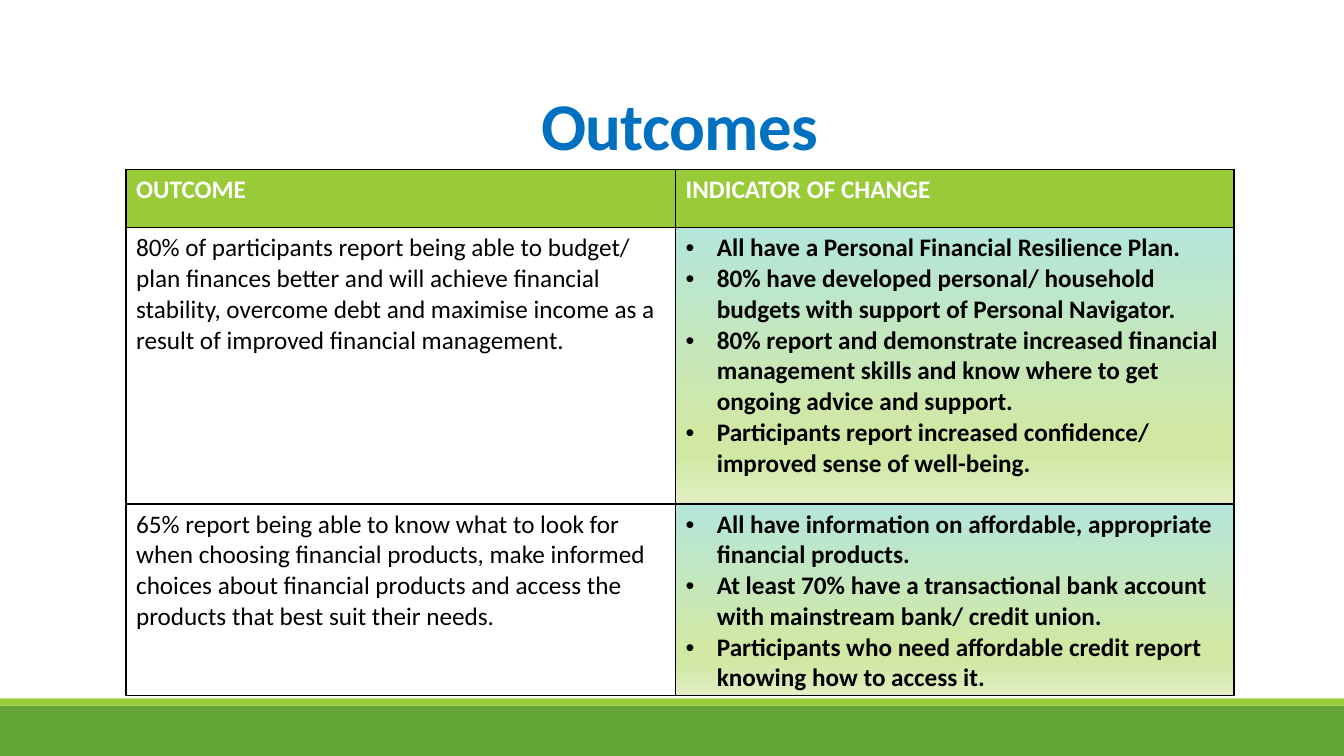
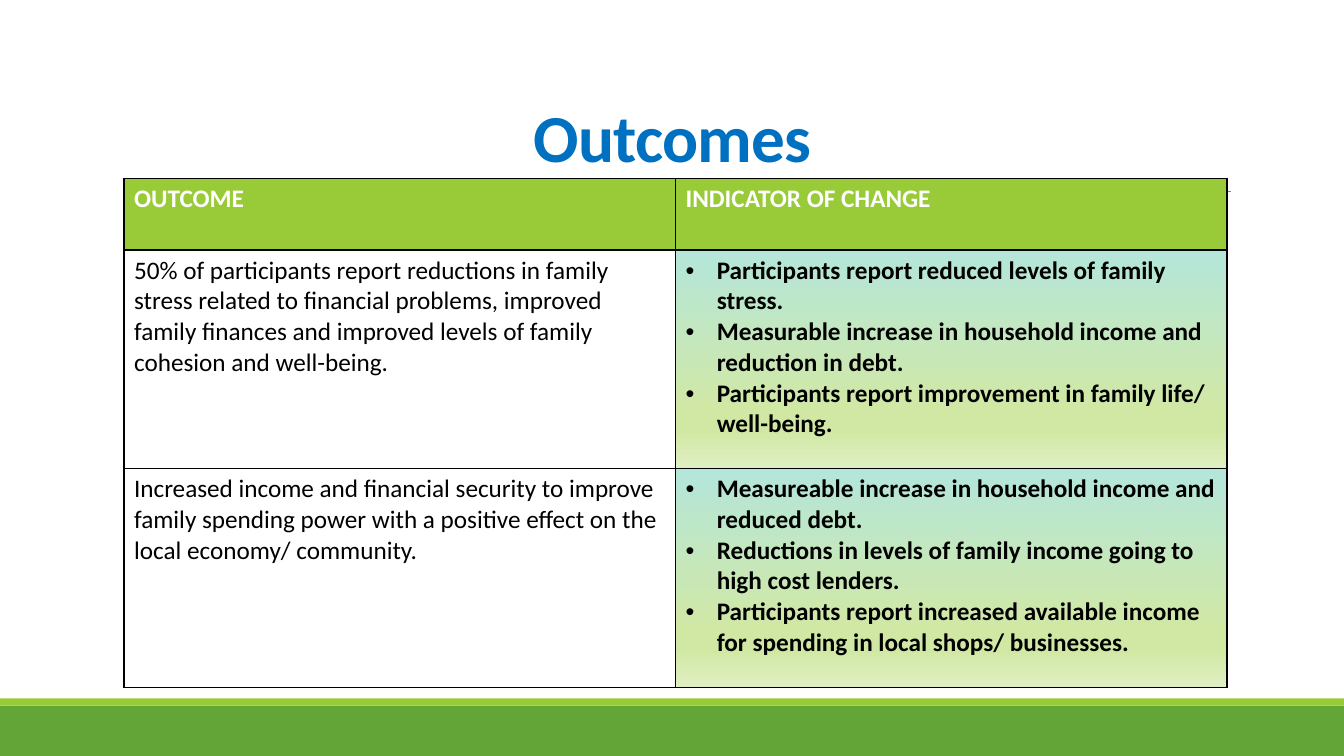
import pptx
import pptx.util
import pptx.dml.color
import pptx.enum.shapes
import pptx.enum.text
import pptx.oxml
import pptx.oxml.ns

W, H = 13.33, 7.5
COLORS = {"green": "63A537", "lime": "99CB38", "rule": "808080", "title": "0070C0",
          "white": "FFFFFF", "black": "000000"}
GRADIENT = [(0, "B4E6DA"), (74, "D1E8A5"), (83, "D1E8A5"), (100, "E0EFC3")]
HEADER = ["OUTCOME", "INDICATOR OF CHANGE"]
FONTS = {
    "title": {"name": "Calibri", "bold": True},
    "head": {"name": "Calibri", "size": pptx.util.Pt(18), "bold": True},
    "body": {"name": "Calibri", "size": pptx.util.Pt(18), "bold": False},
    "bullet": {"name": "Calibri", "size": pptx.util.Pt(18), "bold": True},
}
FRAME = {"word_wrap": True, "vertical_anchor": pptx.enum.text.MSO_ANCHOR.BOTTOM}

SLIDES = [
    {"title": {"box": (1.25, 0.3, 10.98, 1.38), "size": 47.7, "spacing": 0.85},
     "table": {"at": (1.25, 1.68), "cols": [5.45, 5.54], "rows": [0.58, 2.74, 1.88]},
     "outcomes": [
         ("80% of participants report being able to budget/ plan finances better and will "
          "achieve financial stability, overcome debt and maximise income as a result of "
          "improved financial management.",
          ["All have a Personal Financial Resilience Plan.",
           "80% have developed personal/ household budgets with support of Personal Navigator.",
           "80% report and demonstrate increased financial management skills and know where "
           "to get ongoing advice and support.",
           "Participants report increased confidence/ improved sense of well-being."]),
         ("65% report being able to know what to look for when choosing financial products, "
          "make informed choices about financial products and access the products that best "
          "suit their needs.",
          ["All have information on affordable, appropriate financial products.",
           "At least 70% have a transactional bank account with mainstream bank/ credit union.",
           "Participants who need affordable credit report knowing how to access it."])]},
    {"title": {"box": (1.17, 0.46, 11, 1.32), "size": 48, "spacing": 0.75},
     "table": {"at": (1.23, 1.77), "cols": [5.47, 5.47], "rows": [0.71, 2.17, 2.17]},
     "outcomes": [
         ("50% of participants report reductions in family stress related to financial "
          "problems, improved family finances and improved levels of family cohesion and "
          "well-being.",
          ["Participants report reduced levels of family stress.",
           "Measurable increase in household income and reduction in debt.",
           "Participants report improvement in family life/ well-being."]),
         ("Increased income and financial security to improve family spending power with a "
          "positive effect on the local economy/ community.",
          ["Measureable increase in household income and reduced debt.",
           "Reductions in levels of family income going to high cost lenders.",
           "Participants report increased available income for spending in local shops/ "
           "businesses."])]},
]


def inches(*values):
    """Convert numbers to lengths in inches."""
    return [pptx.util.Inches(v) for v in values]


def rgb(name):
    """Look up a named colour."""
    return pptx.dml.color.RGBColor.from_string(COLORS[name])


def xml(text):
    """Parse one drawing element."""
    tag, rest = text[1:].split(" ", 1)
    return pptx.oxml.parse_xml(f"<{tag} {pptx.oxml.ns.nsdecls('a')} {rest}")


def apply(obj, formats):
    """Set attributes from a dict of format values."""
    for key, value in formats.items():
        setattr(obj, key, value)


def write(p, text, font, color):
    """Add one formatted run to a paragraph."""
    r = p.add_run()
    r.text = text
    apply(r.font, FONTS[font])
    r.font.color.rgb = rgb(color)
    return r


def add_base(s):
    """Draw the footer bands and the rule below the title."""
    for top, height, color in ((7, 0.5, "green"), (6.93, 0.07, "lime")):
        sp = s.shapes.add_shape(pptx.enum.shapes.MSO_SHAPE.RECTANGLE,
                                *inches(0, top, W, height))
        sp.shadow.inherit = False
        sp.fill.solid()
        sp.fill.fore_color.rgb = rgb(color)
        sp.line.fill.background()
    rule = s.shapes.add_connector(pptx.enum.shapes.MSO_CONNECTOR.STRAIGHT,
                                  *inches(1.31, 1.9, 12.21, 1.9))
    rule.line.color.rgb = rgb("rule")
    rule.line.width = pptx.util.Pt(0.5)
    rule._element.spPr.append(xml("<a:effectLst />"))


def add_title(s, box, size, spacing):
    """Place the centred title at the bottom of its box."""
    tf = s.shapes.add_textbox(*inches(*box)).text_frame
    apply(tf, FRAME)
    p = tf.paragraphs[0]
    apply(p, {"alignment": pptx.enum.text.PP_ALIGN.CENTER, "line_spacing": spacing})
    r = write(p, "Outcomes", "title", "title")
    r.font.size = pptx.util.Pt(size)
    r._r.get_or_add_rPr().set("spc", "-50")


def add_borders(cell):
    """Draw a black line on all four sides of a cell."""
    for side in "LRTB":
        cell._tc.get_or_add_tcPr().append(xml(
            f'<a:ln{side} w="12700"><a:solidFill><a:srgbClr val="{COLORS["black"]}"/>'
            f"</a:solidFill></a:ln{side}>"))


def fill_gradient(cell):
    """Fill a cell with the vertical gradient."""
    stops = "".join(f'<a:gs pos="{pos * 1000}"><a:srgbClr val="{color}"/></a:gs>'
                    for pos, color in GRADIENT)
    cell._tc.get_or_add_tcPr().append(xml(
        f'<a:gradFill rotWithShape="1"><a:gsLst>{stops}</a:gsLst>'
        '<a:lin ang="5400000" scaled="0"/></a:gradFill>'))


def write_bullets(tf, items):
    """Write a hanging bullet list."""
    for i, item in enumerate(items):
        p = tf.add_paragraph() if i else tf.paragraphs[0]
        indent = pptx.util.Inches(0.31)
        pPr = p._p.get_or_add_pPr()
        pPr.set("marL", str(indent))
        pPr.set("indent", str(-indent))
        pPr.append(xml('<a:buFont typeface="Arial"/>'))
        pPr.append(xml('<a:buChar char="•"/>'))
        write(p, item, "bullet", "black")


def add_outcomes(s, at, cols, rows, outcomes):
    """Build the table of outcomes and indicators."""
    frame = s.shapes.add_table(len(rows), len(cols), *inches(*at, sum(cols), sum(rows)))
    table = frame.table
    apply(table, {"first_row": False, "horz_banding": False})
    for col, width in zip(table.columns, cols):
        col.width = pptx.util.Inches(width)
    for row, height in zip(table.rows, rows):
        row.height = pptx.util.Inches(height)
    for cell in table.iter_cells():
        add_borders(cell)
    for c, text in enumerate(HEADER):
        cell = table.cell(0, c)
        cell.fill.solid()
        cell.fill.fore_color.rgb = rgb("lime")
        write(cell.text_frame.paragraphs[0], text, "head", "white")
    for n, (outcome, indicators) in enumerate(outcomes, 1):
        left, right = table.cell(n, 0), table.cell(n, 1)
        left.fill.background()
        write(left.text_frame.paragraphs[0], outcome, "body", "black")
        fill_gradient(right)
        write_bullets(right.text_frame, indicators)


def main():
    """Build and save the slides."""
    prs = pptx.Presentation()
    prs.slide_width, prs.slide_height = inches(W, H)
    for data in SLIDES:
        s = prs.slides.add_slide(prs.slide_layouts[6])
        add_base(s)
        add_title(s, **data["title"])
        add_outcomes(s, **data["table"], outcomes=data["outcomes"])
    prs.save("out.pptx")


if __name__ == "__main__":
    main()
